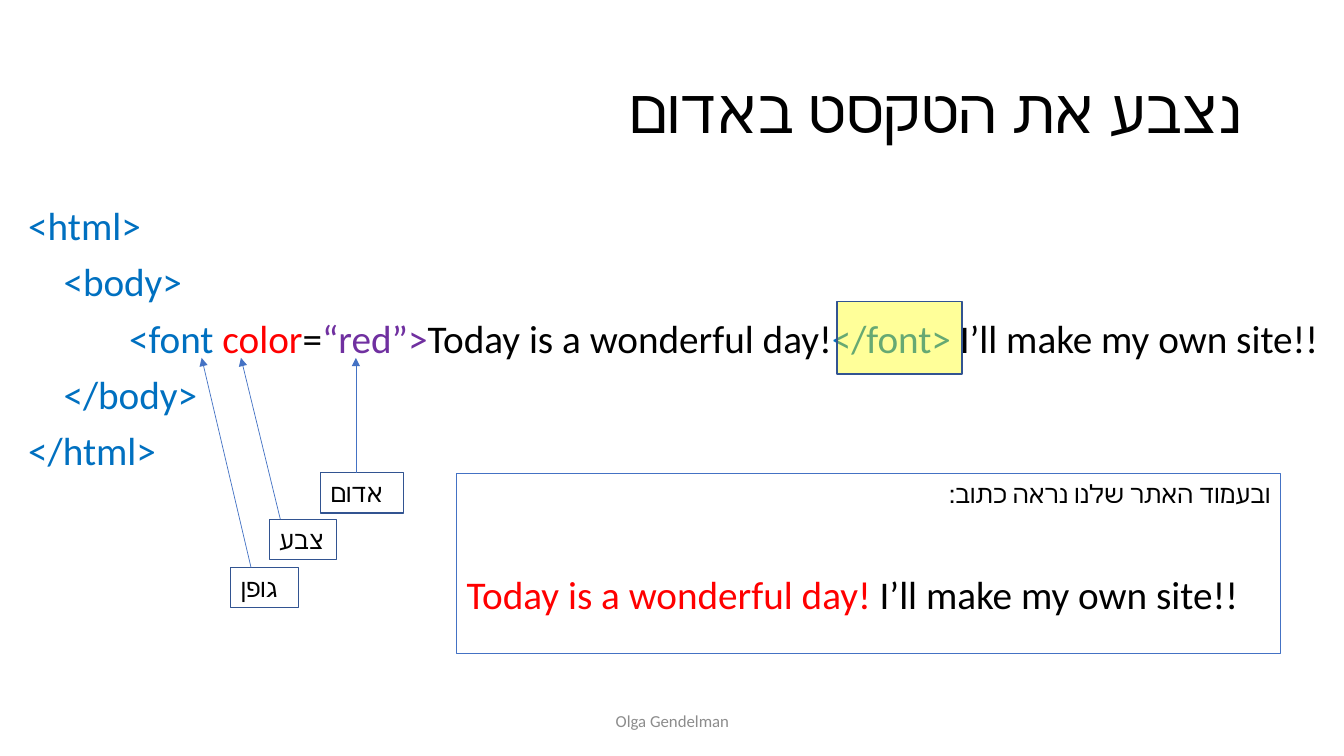
from dataclasses import dataclass

from lxml import etree
from pptx import Presentation
from pptx.dml.color import RGBColor
from pptx.enum.shapes import MSO_CONNECTOR, MSO_SHAPE
from pptx.enum.text import MSO_ANCHOR, MSO_AUTO_SIZE, PP_ALIGN
from pptx.oxml.ns import qn
from pptx.util import Inches, Pt

STRAIGHT = MSO_CONNECTOR.STRAIGHT
RECT = MSO_SHAPE.RECTANGLE
MIDDLE = MSO_ANCHOR.MIDDLE
FIXED = MSO_AUTO_SIZE.NONE
RIGHT, LEFT, CENTER = PP_ALIGN.RIGHT, PP_ALIGN.LEFT, PP_ALIGN.CENTER

BLACK = RGBColor(0x00, 0x00, 0x00)
BLUE = RGBColor(0x00, 0x70, 0xC0)
RED = RGBColor(0xFF, 0x00, 0x00)
PURPLE = RGBColor(0x70, 0x30, 0xA0)
GRAY = RGBColor(0x8C, 0x8C, 0x8C)
YELLOW = RGBColor(0xFF, 0xFF, 0x00)
ACCENT = RGBColor(0x44, 0x72, 0xC4)
NAVY = RGBColor(0x32, 0x54, 0x91)

FACE = "Calibri"
TIP_TOP = 3.55


@dataclass(frozen=True)
class Piece:
    text: str
    color: RGBColor


@dataclass(frozen=True)
class Line:
    indent: float
    pieces: tuple[Piece, ...]


@dataclass(frozen=True)
class Tag:
    text: str
    left: float
    top: float
    width: float
    start: float
    tip: float


CODE = (
    Line(0, (Piece("<html>", BLUE),)),
    Line(0.35, (Piece("<body>", BLUE),)),
    Line(1, (
        Piece("<font ", BLUE),
        Piece("color", RED),
        Piece("=", BLACK),
        Piece("“red”>", PURPLE),
        Piece("Today is a wonderful day!", BLACK),
        Piece("</font>", BLUE),
        Piece(" I’ll make my own site!!", BLACK),
    )),
    Line(0.35, (Piece("</body>", BLUE),)),
    Line(0, (Piece("</html>", BLUE),)),
)

RESULT = (
    Piece("Today is a wonderful day! ", RED),
    Piece("I’ll make my own site!!", BLACK),
)

TAGS = (
    Tag("גופן", 2.29, 5.63, 0.67, 2.49, 2),
    Tag("צבע", 2.67, 5.15, 0.67, 2.78, 2.39),
    Tag("אדום", 3.18, 4.69, 0.82, 3.53, 3.53),
)


def place(shape, left: float, top: float, width: float, height: float) -> None:
    shape.left, shape.top = Inches(left), Inches(top)
    shape.width, shape.height = Inches(width), Inches(height)


def write(para, pieces: tuple[Piece, ...], size: int, align=LEFT) -> None:
    para.alignment = align
    para.font.name = FACE
    para.font.size = Pt(size)
    if len(pieces) == 1:
        para.font.color.rgb = pieces[0].color
    for piece in pieces:
        run = para.add_run()
        run.text = piece.text
        if len(pieces) > 1:
            run.font.color.rgb = piece.color


def set_rtl(para) -> None:
    para.alignment = RIGHT
    para._p.get_or_add_pPr().set("rtl", "1")


def add_box(slide, left: float, top: float, width: float, height: float):
    box = slide.shapes.add_textbox(
        Inches(left), Inches(top), Inches(width), Inches(height))
    box.text_frame.word_wrap = True
    return box


def outline(shape, color: RGBColor, width: float) -> None:
    shape.line.color.rgb = color
    shape.line.width = Pt(width)


def fill_title(slide) -> None:
    title = slide.shapes.title
    place(title, 0.92, 0.4, 11.5, 1.45)
    title.text_frame.vertical_anchor = MIDDLE
    para = title.text_frame.paragraphs[0]
    write(para, (Piece("נצבע את הטקסט באדום", BLACK),), 44)
    set_rtl(para)
    para.line_spacing = 0.9


def fill_code(slide) -> None:
    body = slide.placeholders[1]
    place(body, 0.18, 2, 13.15, 4.76)
    frame = body.text_frame
    frame.auto_size = FIXED
    for row, line in enumerate(CODE):
        para = frame.add_paragraph() if row else frame.paragraphs[0]
        write(para, line.pieces, 28)
        para.line_spacing = 0.9
        para.space_before = Pt(10)
        props = para._p.get_or_add_pPr()
        props.set("marL", str(Inches(line.indent)))
        props.set("indent", "0")
        props.find(qn("a:defRPr")).addprevious(
            etree.Element(qn("a:buNone")))


def add_footer(slide) -> None:
    frame = add_box(slide, 4.42, 6.95, 4.5, 0.4).text_frame
    frame.vertical_anchor = MIDDLE
    write(frame.paragraphs[0], (Piece("Olga Gendelman", GRAY),), 12, CENTER)


def add_result(slide) -> None:
    box = add_box(slide, 4.53, 4.7, 8.17, 1.78)
    outline(box, ACCENT, 0.75)
    head = box.text_frame.paragraphs[0]
    write(head, (Piece("ובעמוד האתר שלנו נראה כתוב:", BLACK),), 18)
    set_rtl(head)
    para = box.text_frame.add_paragraph()
    write(para, RESULT, 28)
    para.space_before = Pt(44)


def add_tag(slide, tag: Tag) -> None:
    box = add_box(slide, tag.left, tag.top, tag.width, 0.4)
    outline(box, NAVY, 0.75)
    write(box.text_frame.paragraphs[0], (Piece(tag.text, BLACK),), 18)


def add_arrow(slide, tag: Tag) -> None:
    arrow = slide.shapes.add_connector(
        STRAIGHT, Inches(tag.start), Inches(tag.top),
        Inches(tag.tip), Inches(TIP_TOP))
    outline(arrow, ACCENT, 0.5)
    props = arrow._element.spPr
    etree.SubElement(props.find(qn("a:ln")), qn("a:tailEnd"), type="triangle")
    etree.SubElement(props, qn("a:effectLst"))


def add_mark(slide) -> None:
    mark = slide.shapes.add_shape(
        RECT, Inches(8.3), Inches(2.99), Inches(1.24), Inches(0.72))
    mark.shadow.inherit = False
    mark.fill.solid()
    mark.fill.fore_color.rgb = YELLOW
    color = mark._element.spPr.find(qn("a:solidFill")).find(qn("a:srgbClr"))
    etree.SubElement(color, qn("a:alpha"), val="40000")
    outline(mark, NAVY, 1)


def main() -> None:
    deck = Presentation()
    deck.slide_width, deck.slide_height = Inches(13.33), Inches(7.5)
    slide = deck.slides.add_slide(deck.slide_layouts[1])
    fill_title(slide)
    fill_code(slide)
    add_footer(slide)
    add_result(slide)
    for tag in TAGS:
        add_tag(slide, tag)
        add_arrow(slide, tag)
    add_mark(slide)
    deck.save("out.pptx")


if __name__ == "__main__":
    main()
